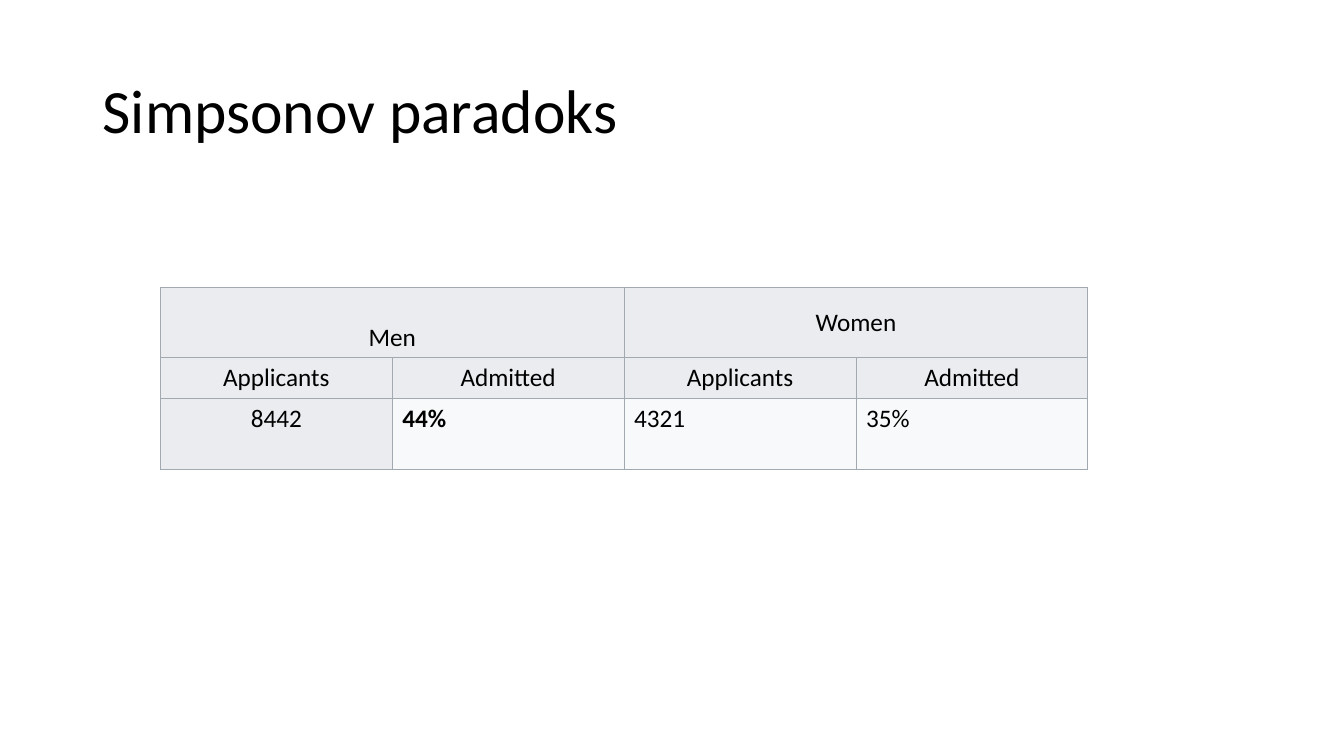
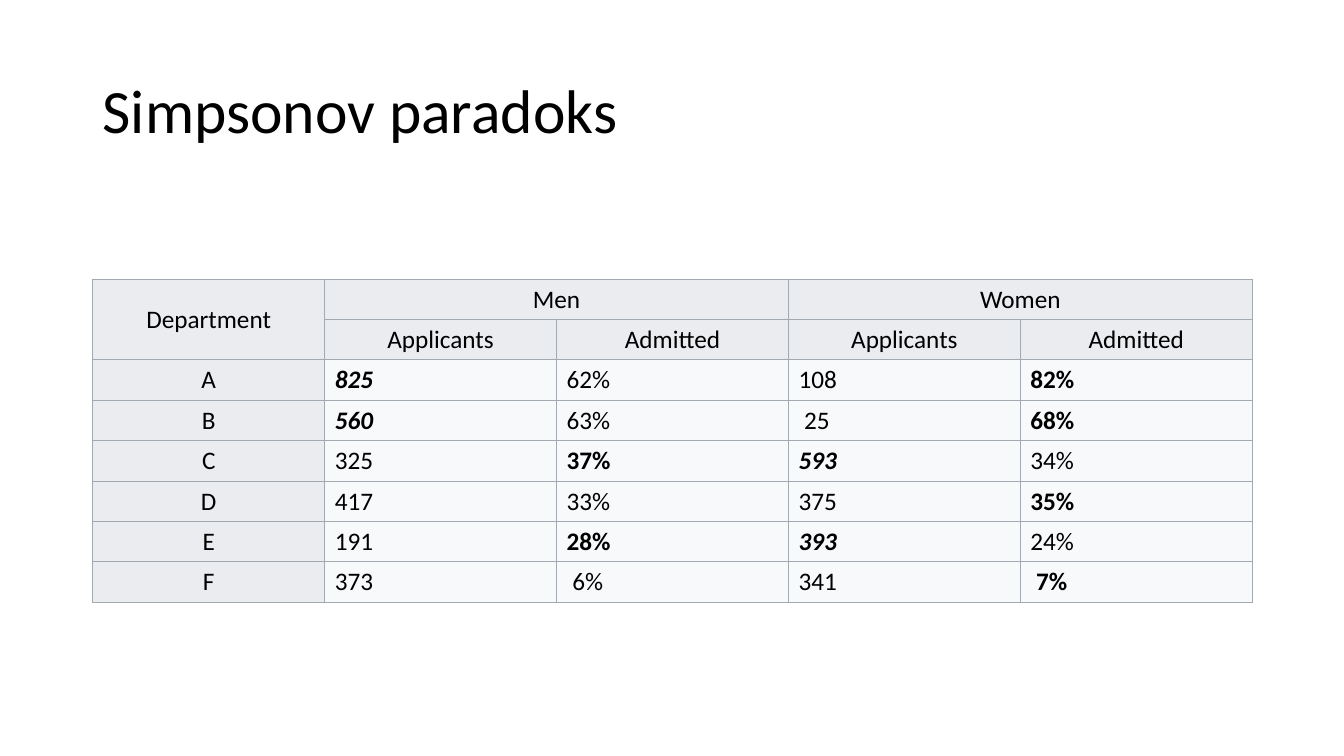
from dataclasses import dataclass

from lxml import etree
from pptx import Presentation
from pptx import util as u
from pptx.dml.color import RGBColor
from pptx.enum import text
from pptx.oxml import ns

PX = 9144  # EMU, 100 px to the inch
FONT = "Calibri"
BLACK = RGBColor(0x00, 0x00, 0x00)
HEAD = RGBColor(0xEA, 0xEC, 0xF0)
BODY = RGBColor(0xF8, 0xF9, 0xFA)
EDGE = RGBColor(0xA2, 0xA9, 0xB1)
TITLE = "Simpsonov paradoks"
COL = 230
ROW = 40
Anchor = text.MSO_ANCHOR
MID, TOP, LOW = Anchor.MIDDLE, Anchor.TOP, Anchor.BOTTOM


@dataclass(frozen=True)
class Cell:
    label: str
    head: bool = False
    bold: bool = False
    ital: bool = False
    rows: int = 1
    cols: int = 1
    anchor: Anchor = MID


@dataclass(frozen=True)
class Grid:
    left: int
    top: int
    heights: list[int]
    cells: list[list[Cell]]


def head(label: str, rows: int = 1, cols: int = 1,
         anchor: Anchor = MID) -> Cell:
    return Cell(label, head=True, rows=rows, cols=cols, anchor=anchor)


def bold(label: str, anchor: Anchor = MID) -> Cell:
    return Cell(label, bold=True, anchor=anchor)


def both(label: str) -> Cell:
    """Make a cell in bold italics."""
    return Cell(label, bold=True, ital=True)


GAP = head("")  # covered by a merged neighbour
PAIRS = [head("Applicants"), head("Admitted")] * 2

TOTALS = Grid(159, 285, [70, ROW, 71], [
    [head("Men", cols=2, anchor=LOW), GAP, head("Women", cols=2), GAP],
    PAIRS,
    [head("8442", anchor=TOP), bold("44%", TOP),
     Cell("4321", anchor=TOP), Cell("35%", anchor=TOP)],
])

UNITS = Grid(92, 277, [ROW] * 8, [
    [head("Department", rows=2), head("Men", cols=2), GAP,
     head("Women", cols=2), GAP],
    [GAP, *PAIRS],
    [head("A"), both("825"), Cell("62%"), Cell("108"), bold("82%")],
    [head("B"), both("560"), Cell("63%"), Cell(" 25"), bold("68%")],
    [head("C"), Cell("325"), bold("37%"), both("593"), Cell("34%")],
    [head("D"), Cell("417"), Cell("33%"), Cell("375"), bold("35%")],
    [head("E"), Cell("191"), bold("28%"), both("393"), Cell("24%")],
    [head("F"), Cell("373"), Cell(" 6%"), Cell("341"), bold(" 7%")],
])


def style(para, size: int, strong: bool = False, ital: bool = False) -> None:
    for run in para.runs:
        font = run.font
        font.name, font.size = FONT, u.Pt(size)
        font.bold, font.italic = strong, ital
        font.color.rgb = BLACK


def edge(box) -> None:
    """Draw a thin line on all four sides of a table cell."""
    props = box._tc.get_or_add_tcPr()
    for side in ("a:lnL", "a:lnR", "a:lnT", "a:lnB"):
        line = etree.SubElement(props, ns.qn(side), w=str(int(u.Pt(0.75))))
        fill = etree.SubElement(line, ns.qn("a:solidFill"))
        etree.SubElement(fill, ns.qn("a:srgbClr"), val=str(EDGE))


def add_title(slide) -> None:
    box = slide.shapes.add_textbox(92 * PX, 40 * PX, 1150 * PX, 145 * PX)
    frame = box.text_frame
    frame.word_wrap = True
    frame.vertical_anchor = MID
    frame.text = TITLE
    para = frame.paragraphs[0]
    para.line_spacing = 0.9
    style(para, 44)


def fill_cell(box, cell: Cell) -> None:
    edge(box)
    box.fill.solid()
    box.fill.fore_color.rgb = HEAD if cell.head else BODY
    box.vertical_anchor = cell.anchor
    box.text_frame.text = cell.label
    para = box.text_frame.paragraphs[0]
    if cell.head:
        para.alignment = text.PP_ALIGN.CENTER
    style(para, 18, cell.bold, cell.ital)


def add_grid(slide, grid: Grid) -> None:
    rows, cols = len(grid.cells), len(grid.cells[0])
    table = slide.shapes.add_table(
        rows, cols, grid.left * PX, grid.top * PX,
        cols * COL * PX, sum(grid.heights) * PX).table
    table.first_row = table.horz_banding = False
    for col in table.columns:
        col.width = COL * PX
    for row, height in zip(table.rows, grid.heights):
        row.height = height * PX
    for r, line in enumerate(grid.cells):
        for c, cell in enumerate(line):
            box = table.cell(r, c)
            fill_cell(box, cell)
            if cell.rows * cell.cols > 1:
                box.merge(table.cell(r + cell.rows - 1, c + cell.cols - 1))


def main() -> None:
    deck = Presentation()
    deck.slide_width, deck.slide_height = 1333 * PX, 750 * PX
    for grid in (TOTALS, UNITS):
        slide = deck.slides.add_slide(deck.slide_layouts[6])
        add_title(slide)
        add_grid(slide, grid)
    deck.save("out.pptx")


if __name__ == "__main__":
    main()
